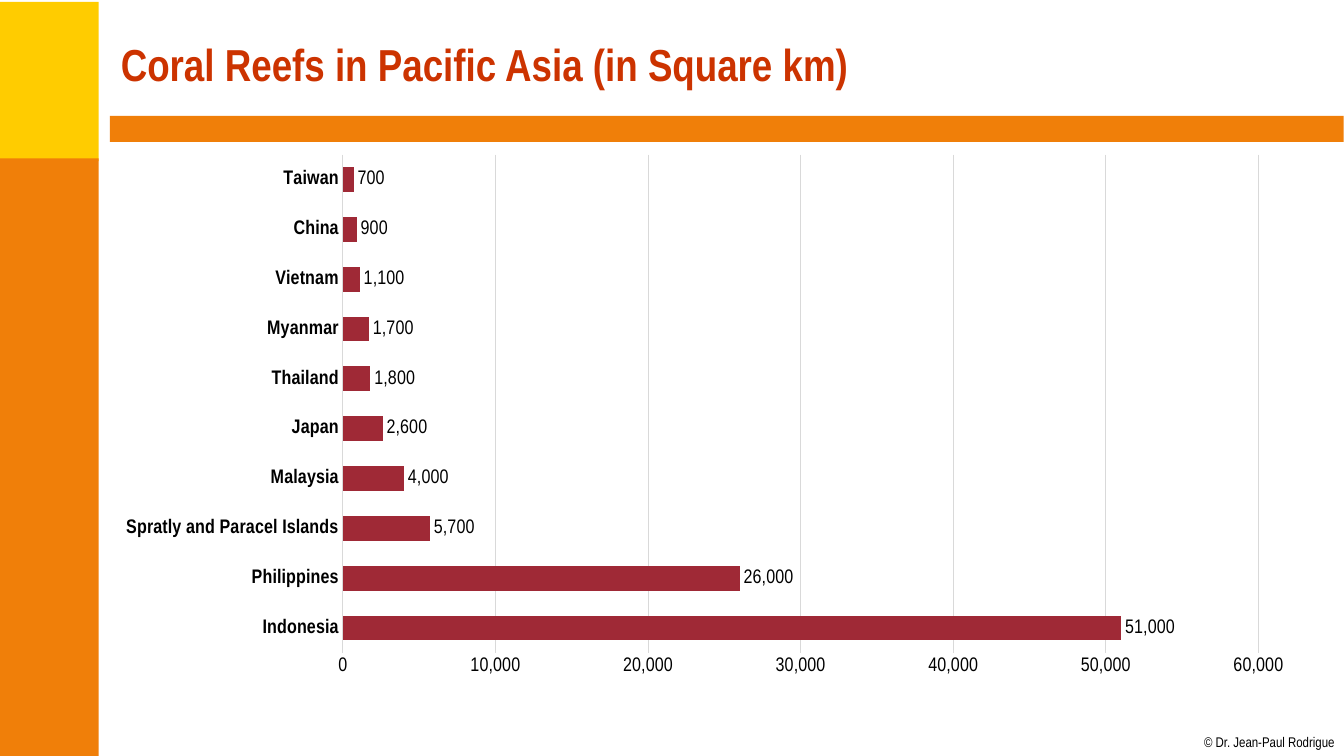
from lxml import etree
from pptx import Presentation
from pptx.chart.data import CategoryChartData
from pptx.dml.color import RGBColor
from pptx.enum.chart import XL_CHART_TYPE, XL_LABEL_POSITION, XL_TICK_MARK
from pptx.enum.shapes import MSO_SHAPE
from pptx.enum.text import MSO_ANCHOR, MSO_AUTO_SIZE, PP_ALIGN
from pptx.oxml.ns import qn
from pptx.util import Cm, Pt

BAR_CLUSTERED = XL_CHART_TYPE.BAR_CLUSTERED
OUTSIDE_END = XL_LABEL_POSITION.OUTSIDE_END
NO_TICK = XL_TICK_MARK.NONE
RECTANGLE = MSO_SHAPE.RECTANGLE
MIDDLE = MSO_ANCHOR.MIDDLE
NO_AUTOFIT = MSO_AUTO_SIZE.NONE
LEFT = PP_ALIGN.LEFT
RIGHT = PP_ALIGN.RIGHT

COLORS = {
    "yellow": "FFCC00",
    "orange": "F07F09",
    "heading": "CC3300",
    "bar": "9F2936",
    "grid": "D9D9D9",
    "text": "000000",
}

BANDS = [
    ("yellow", -0.05, 0.05, 2.54, 4.01),
    ("orange", -0.05, 3.99, 2.54, 15.06),
    ("orange", 2.77, 2.92, 31.09, 0.66),
]

REEF_AREAS = {
    "Indonesia": 51000,
    "Philippines": 26000,
    "Spratly and Paracel Islands": 5700,
    "Malaysia": 4000,
    "Japan": 2600,
    "Thailand": 1800,
    "Myanmar": 1700,
    "Vietnam": 1100,
    "China": 900,
    "Taiwan": 700,
}

PLOT_AREA = {"x": 0.192, "y": 0.018, "w": 0.757, "h": 0.854}


def set_attributes(target, values):
    for name, value in values.items():
        setattr(target, name, value)


class ReefSlide:
    font_name = "Arial Narrow"
    number_format = "#,##0"

    def __init__(self, presentation):
        self.slide = presentation.slides.add_slide(presentation.slide_layouts[5])

    def color(self, name):
        return RGBColor.from_string(COLORS[name])

    def style_font(self, font, size, color="text", bold=False):
        set_attributes(font, {"name": self.font_name, "size": Pt(size), "bold": bold})
        font.color.rgb = self.color(color)

    def style_line(self, line, color):
        line.color.rgb = self.color(color)
        line.width = Pt(0.75)

    def add_band(self, color, *box):
        band = self.slide.shapes.add_shape(RECTANGLE, *map(Cm, box))
        band.shadow.inherit = False
        band.fill.solid()
        band.fill.fore_color.rgb = self.color(color)
        band.line.fill.background()

    def set_text(self, frame, text, align, **font):
        paragraph = frame.paragraphs[0]
        paragraph.text = text
        paragraph.alignment = align
        self.style_font(paragraph.runs[0].font, **font)

    def add_title(self, text, left, top, width, height):
        title = self.slide.shapes.title
        set_attributes(title, {
            "left": Cm(left), "top": Cm(top), "width": Cm(width), "height": Cm(height),
        })
        set_attributes(title.text_frame, {
            "vertical_anchor": MIDDLE, "auto_size": NO_AUTOFIT, "word_wrap": True,
        })
        self.set_text(title.text_frame, text, LEFT, size=32, color="heading", bold=True)

    def add_credit(self, text, *box):
        frame = self.slide.shapes.add_textbox(*map(Cm, box)).text_frame
        set_attributes(frame, {
            "margin_left": 0, "margin_right": 0, "margin_top": 0, "margin_bottom": 0,
            "word_wrap": False,
        })
        self.set_text(frame, text, RIGHT, size=10)

    def add_bar_chart(self, areas, *box):
        chart_data = CategoryChartData(number_format=self.number_format)
        chart_data.categories = list(areas)
        chart_data.add_series("Series 1", list(areas.values()))
        chart = self.slide.shapes.add_chart(BAR_CLUSTERED, *map(Cm, box), chart_data).chart
        set_attributes(chart, {"has_legend": False, "has_title": False})
        self.style_font(chart.font, 14)
        self.style_axes(chart)
        self.style_bars(chart.plots[0])
        self.place_plot(chart)

    def style_axes(self, chart):
        for axis, bold in ((chart.category_axis, True), (chart.value_axis, False)):
            set_attributes(axis, {"major_tick_mark": NO_TICK, "minor_tick_mark": NO_TICK})
            self.style_font(axis.tick_labels.font, 14, bold=bold)
        self.style_line(chart.category_axis.format.line, "grid")
        area_axis = chart.value_axis
        set_attributes(area_axis, {
            "minimum_scale": 0, "maximum_scale": 60000, "major_unit": 10000,
            "has_major_gridlines": True,
        })
        set_attributes(area_axis.tick_labels, {
            "number_format": self.number_format, "number_format_is_linked": False,
        })
        area_axis.format.line.fill.background()
        self.style_line(area_axis.major_gridlines.format.line, "grid")

    def style_bars(self, plot):
        set_attributes(plot, {
            "gap_width": 100, "vary_by_categories": False, "has_data_labels": True,
        })
        set_attributes(plot.data_labels, {
            "show_value": True, "position": OUTSIDE_END,
            "number_format": self.number_format, "number_format_is_linked": False,
        })
        self.style_font(plot.data_labels.font, 14)
        bars = plot.series[0]
        bars.invert_if_negative = False
        bars.format.fill.solid()
        bars.format.fill.fore_color.rgb = self.color("bar")

    def place_plot(self, chart):
        plot_area = chart.plots[0]._element.getparent()
        for old_layout in plot_area.findall(qn("c:layout")):
            plot_area.remove(old_layout)
        layout = etree.Element(qn("c:layout"))
        plot_area.insert(0, layout)
        manual = etree.SubElement(layout, qn("c:manualLayout"))
        settings = {"layoutTarget": "inner", "xMode": "edge", "yMode": "edge", **PLOT_AREA}
        for tag, value in settings.items():
            etree.SubElement(manual, qn(f"c:{tag}")).set("val", str(value))


def main():
    presentation = Presentation()
    set_attributes(presentation, {"slide_width": Cm(33.87), "slide_height": Cm(19.05)})
    reefs = ReefSlide(presentation)
    for band in BANDS:
        reefs.add_band(*band)
    reefs.add_credit("© Dr. Jean-Paul Rodrigue", 30.3, 18.49, 3.33, 0.43)
    reefs.add_title("Coral Reefs in Pacific Asia (in Square km)", 2.79, 0.28, 30.48, 2.64)
    reefs.add_bar_chart(REEF_AREAS, 2.79, 3.63, 30.48, 14.71)
    presentation.save("out.pptx")


if __name__ == "__main__":
    main()
